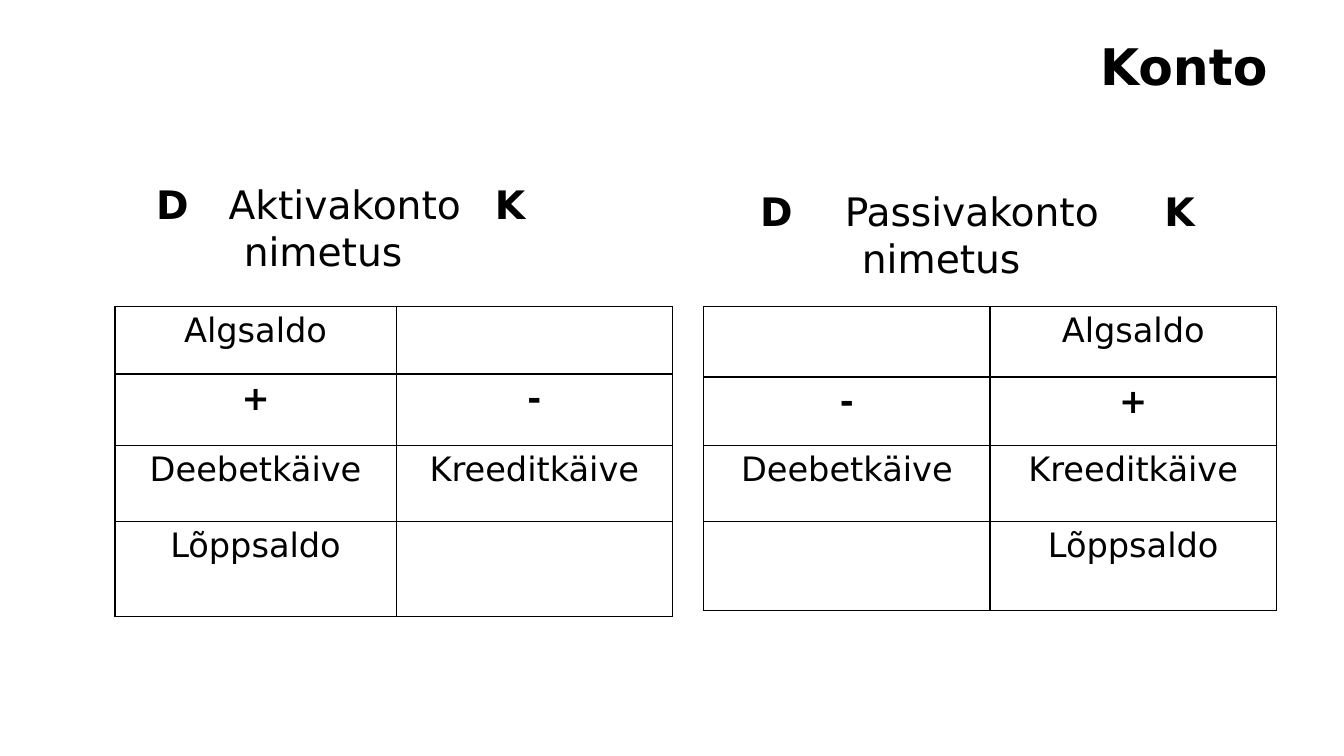
from dataclasses import dataclass

from lxml.etree import SubElement
from pptx import Presentation
from pptx.dml.color import RGBColor
from pptx.enum.text import MSO_ANCHOR, PP_ALIGN
from pptx.oxml import parse_xml
from pptx.oxml.ns import qn
from pptx.util import Inches, Pt


@dataclass(frozen=True)
class Theme:
    font: str = "DejaVu Sans"
    ink: str = "000000"
    title: int = 36
    heading: int = 28
    cell: int = 24
    border: int = 1


THEME = Theme()


def write(paragraph, text, size, bold=False, align=PP_ALIGN.LEFT):
    """Add one formatted run to a paragraph."""
    paragraph.alignment = align
    run = paragraph.add_run()
    run.text = text
    run.font.name = THEME.font
    run.font.size = Pt(size)
    run.font.bold = bold
    run.font.color.rgb = RGBColor.from_string(THEME.ink)


def add_text_frame(slide, box, inset=0.1):
    frame = slide.shapes.add_textbox(*map(Inches, box)).text_frame
    frame.word_wrap = True
    frame.margin_left = frame.margin_right = Inches(0.1)
    frame.margin_top = frame.margin_bottom = Inches(inset)
    return frame


def set_tabs(paragraph, stops):
    tabs = SubElement(paragraph._p.get_or_add_pPr(), qn("a:tabLst"))
    for stop in stops:
        SubElement(tabs, qn("a:tab"), pos=str(Inches(stop)), algn="l")


def set_borders(cell):
    properties = cell._tc.get_or_add_tcPr()
    for index, side in enumerate("LRTB"):
        properties.insert(index, parse_xml(
            f'<a:ln{side} xmlns:a="http://schemas.openxmlformats.org/drawingml/2006/main"'
            f' w="{Pt(THEME.border)}"><a:solidFill><a:srgbClr val="{THEME.ink}"/>'
            f'</a:solidFill></a:ln{side}>'))


def add_title(slide, box):
    frame = add_text_frame(slide, box)
    frame.vertical_anchor = MSO_ANCHOR.MIDDLE
    write(frame.paragraphs[0], "Konto", THEME.title, True, PP_ALIGN.RIGHT)


def add_account_heading(slide, box, account, name_stops, second_line_stop, inset):
    """Debit and credit letters around the account name."""
    frame = add_text_frame(slide, box, inset)
    first_line = frame.paragraphs[0]
    set_tabs(first_line, name_stops)
    for text, bold in (("\tD", True), (f"\t{account}", False), ("\tK", True)):
        write(first_line, text, THEME.heading, bold)
    second_line = frame.add_paragraph()
    set_tabs(second_line, [second_line_stop])
    write(second_line, "\tnimetus", THEME.heading)


def add_account_table(slide, left, top, widths, heights, entries):
    table = slide.shapes.add_table(
        len(heights), len(widths), Inches(left), Inches(top),
        Inches(sum(widths)), Inches(sum(heights))).table
    table.first_row = table.horz_banding = False
    for column, width in zip(table.columns, widths):
        column.width = Inches(width)
    for row, height, texts in zip(table.rows, heights, entries):
        row.height = Inches(height)
        for cell, text in zip(row.cells, texts):
            cell.fill.background()
            set_borders(cell)
            if text:
                write(cell.text_frame.paragraphs[0], text, THEME.cell,
                      text in "+-", PP_ALIGN.CENTER)


def main():
    presentation = Presentation()
    presentation.slide_width = Inches(13.33)
    presentation.slide_height = Inches(7.5)
    slide = presentation.slides.add_slide(presentation.slide_layouts[6])

    add_title(slide, (4.15, 0.3, 8.52, 0.69))

    # Asset account
    add_account_heading(slide, (0.93, 1.69, 6.06, 5.67), "Aktivakonto",
                        (0.52, 1.24, 3.88), 1.39, 0.1)
    add_account_table(slide, 1.14, 3.04, (2.79, 2.74), (0.67, 0.71, 0.75, 0.95), (
        ("Algsaldo", ""),
        ("+", "-"),
        ("Deebetkäive", "Kreeditkäive"),
        ("Lõppsaldo", "")))

    # Liability account
    add_account_heading(slide, (6.48, 1.81, 6.52, 4.81), "Passivakonto",
                        (0.96, 1.8, 4.97), 1.97, 0.05)
    add_account_table(slide, 6.98, 3.04, (2.84, 2.84), (0.7, 0.68, 0.75, 0.89), (
        ("", "Algsaldo"),
        ("-", "+"),
        ("Deebetkäive", "Kreeditkäive"),
        ("", "Lõppsaldo")))

    presentation.save("out.pptx")


if __name__ == "__main__":
    main()
